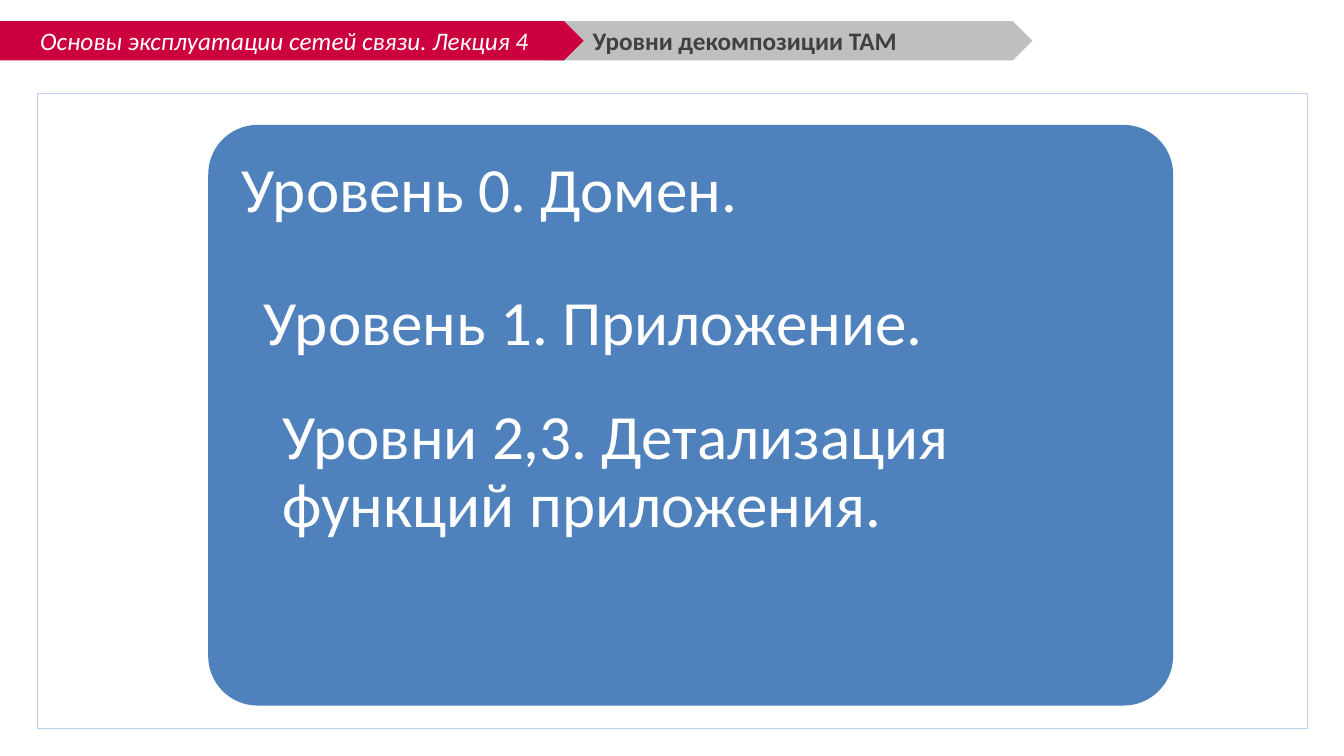
"""Build the slide on the levels of TAM decomposition."""
from dataclasses import dataclass

from pptx import Presentation
from pptx.dml.color import RGBColor
from pptx.enum.shapes import MSO_SHAPE
from pptx.enum.text import MSO_ANCHOR, PP_ALIGN
from pptx.util import Inches, Pt


@dataclass(frozen=True)
class Theme:
    font: str = "Calibri"
    red: str = "CC003F"
    grey: str = "BFBFBF"
    blue: str = "4F81BD"
    frame: str = "B8D0ED"
    dark: str = "404040"
    white: str = "FFFFFF"
    header_size: int = 18
    level_size: int = 45


theme = Theme()
prs = Presentation()
prs.slide_width, prs.slide_height = Inches(13.33), Inches(7.5)
s = prs.slides.add_slide(prs.slide_layouts[6])


def add_box(kind, left, top, width, height, fill=None):
    """Add a plain shape placed in percent of the slide's size."""
    col, row = prs.slide_width / 100, prs.slide_height / 100
    sp = s.shapes.add_shape(kind, int(left * col), int(top * row),
                            int(width * col), int(height * row))
    sp.shadow.inherit = False
    sp.line.fill.background()
    if fill:
        sp.fill.solid()
        sp.fill.fore_color.rgb = RGBColor.from_string(fill)
    else:
        sp.fill.background()
    return sp


def write(sp, text, size, color, align=PP_ALIGN.LEFT, anchor=MSO_ANCHOR.MIDDLE):
    """Set one paragraph of text and return its paragraph and run."""
    tf = sp.text_frame
    tf.word_wrap = True
    tf.vertical_anchor = anchor
    p = tf.paragraphs[0]
    p.text = text
    p.alignment = align
    r = p.runs[0]
    r.font.name = theme.font
    r.font.size = Pt(size)
    r.font.color.rgb = RGBColor.from_string(color)
    return p, r


header_top, header_height = 2.8, 5.2
add_box(MSO_SHAPE.PENTAGON, 40.58, header_top, 36.23, header_height, theme.grey)

frame = add_box(MSO_SHAPE.RECTANGLE, 2.78, 12.27, 94.52, 84)
frame.line.color.rgb = RGBColor.from_string(theme.frame)
frame.line.width = Pt(0.25)

course = add_box(MSO_SHAPE.PENTAGON, -0.38, header_top, 43.81, header_height, theme.red)
p, r = write(course, "Основы эксплуатации сетей связи. Лекция 4",
             theme.header_size, theme.white, PP_ALIGN.CENTER)
r.font.italic = True

title = s.shapes.add_textbox(int(prs.slide_width * 0.4336), int(prs.slide_height * header_top / 100),
                             int(prs.slide_width * 0.3106), int(prs.slide_height * header_height / 100))
p, r = write(title, "Уровни декомпозиции TAM", theme.header_size, theme.dark)
r.font.bold = True

levels = [
    ("Уровень 0. Домен.", 16.53, 76.8, 0.085),
    ("Уровень 1. Приложение.", 34.27, 53.73, 0.105),
    ("Уровни 2,3. Детализация функций приложения.", 50.13, 30.67, 0.105),
]
center, outer_width, width_step = 51.39, 71.79, 3.57
for i, (text, top, height, corner) in enumerate(levels):
    width = outer_width - i * width_step
    card = add_box(MSO_SHAPE.ROUNDED_RECTANGLE, center - width / 2, top, width, height, theme.blue)
    card.adjustments[0] = corner
    tf = card.text_frame
    tf.margin_left = tf.margin_top = tf.margin_right = tf.margin_bottom = Inches(0.19)
    p, r = write(card, text, theme.level_size, theme.white, anchor=MSO_ANCHOR.TOP)
    p.line_spacing = 0.9

prs.save("out.pptx")
